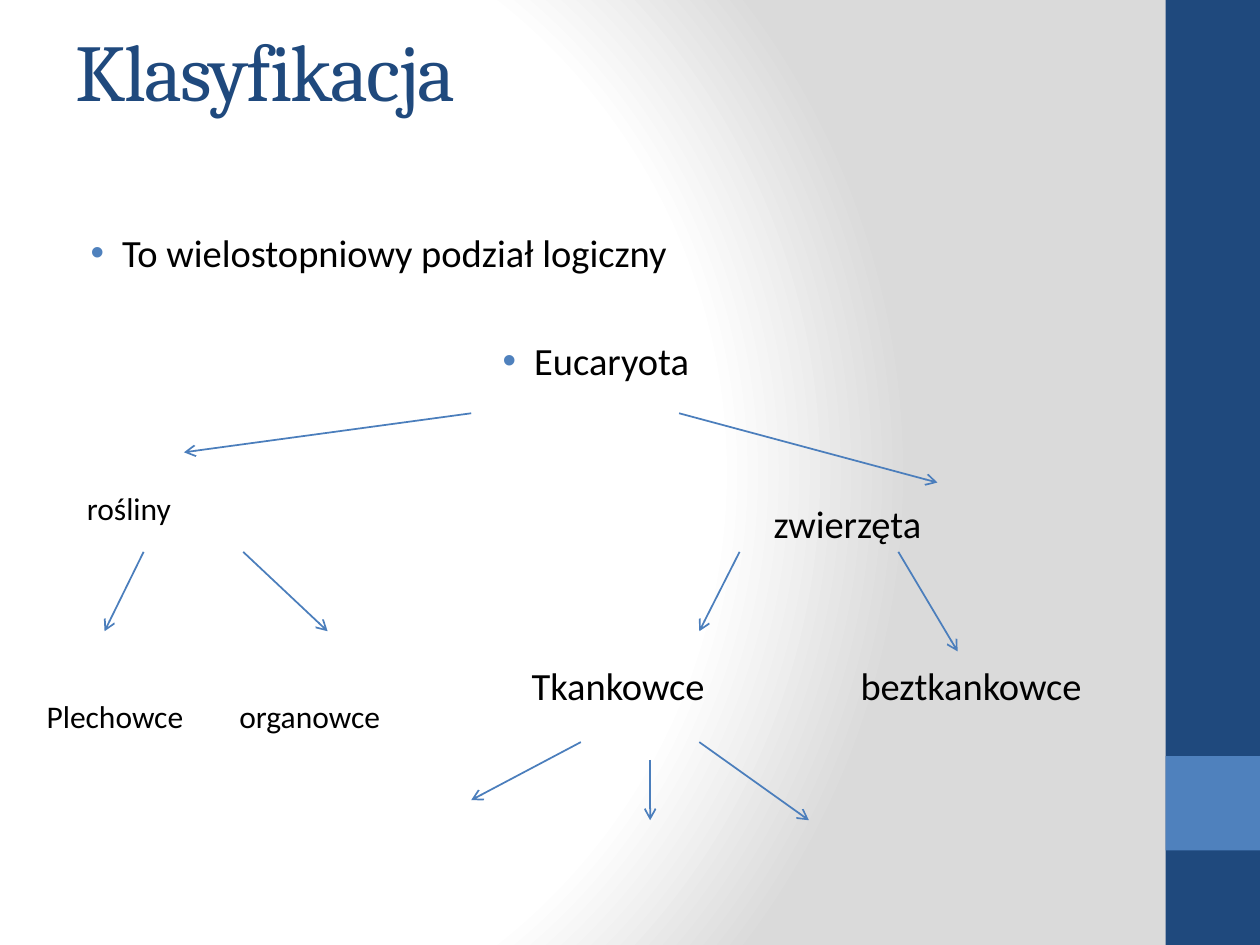
from lxml import etree
from pptx import Presentation
from pptx.dml.color import RGBColor
from pptx.enum.shapes import MSO_CONNECTOR, MSO_SHAPE
from pptx.enum.text import MSO_ANCHOR
from pptx.oxml import parse_xml
from pptx.oxml.ns import qn
from pptx.util import Inches, Pt

NAVY, BLUE, LINE, BLACK = "1F497D", "4F81BD", "4B7EBC", "000000"
NS = "http://schemas.openxmlformats.org/drawingml/2006/main"


def color(value):
    return RGBColor.from_string(value)


def add_node(parent, tag, **attrs):
    return etree.SubElement(parent, qn(tag), attrs)


def add_back(slide):
    """Radial gradient, white on the left and grey on the right."""
    slide.background.fill.gradient()
    old = next(slide.element.iter(qn("a:gradFill")))
    stops = "".join(
        f'<a:gs pos="{pos * 1000}"><a:srgbClr val="{tone}"/></a:gs>'
        for pos, tone in ((0, "FFFFFF"), (75, "FFFFFF"), (100, "DADADA")))
    new = parse_xml(
        f'<a:gradFill xmlns:a="{NS}" rotWithShape="1"><a:gsLst>{stops}</a:gsLst>'
        '<a:path path="circle"><a:fillToRect l="20000" t="50000" r="100000"'
        ' b="50000"/></a:path></a:gradFill>')
    old.getparent().replace(old, new)


def add_rect(slide, left, top, width, height, fill):
    rect = slide.shapes.add_shape(
        MSO_SHAPE.RECTANGLE, Inches(left), Inches(top), Inches(width), Inches(height))
    rect.shadow.inherit = False
    rect.fill.solid()
    rect.fill.fore_color.rgb = color(fill)
    rect.line.fill.background()


def add_band(slide, left, top, width, height):
    """Side band with a light square near its foot."""
    add_rect(slide, left, top, width, height, NAVY)
    add_rect(slide, left, top + height - 2 * width, width, width, BLUE)


def add_text(slide, text, left, mid, width, size=22, font="Calibri",
             tone=BLACK, height=0.4):
    """One line of text, centred on the height mid."""
    box = slide.shapes.add_textbox(
        Inches(left), Inches(mid - height / 2), Inches(width), Inches(height))
    frame = box.text_frame
    frame.word_wrap = True
    frame.vertical_anchor = MSO_ANCHOR.MIDDLE
    frame.margin_left = frame.margin_right = 0
    frame.margin_top = frame.margin_bottom = 0
    para = frame.paragraphs[0]
    para.text = text
    para.font.size = Pt(size)
    para.font.name = font
    para.font.color.rgb = color(tone)
    return para


def add_title(slide, left, mid, width):
    para = add_text(slide, "Klasyfikacja", left, mid, width, 46, "Cambria", NAVY, 0.8)
    para.runs[0].font._element.set("spc", "-100")


def add_bullet(slide, text, left, mid, width):
    props = add_text(slide, text, left, mid, width)._p.get_or_add_pPr()
    props.set("marL", str(Inches(0.25)))
    props.set("indent", str(-Inches(0.25)))
    tint = etree.Element(qn("a:buClr"))
    add_node(tint, "a:srgbClr", val=BLUE)
    face = etree.Element(qn("a:buFont"), typeface="Arial")
    mark = etree.Element(qn("a:buChar"), char="•")
    for spot, node in enumerate((tint, face, mark)):
        props.insert(spot, node)


def add_arrow(slide, x1, y1, x2, y2):
    arrow = slide.shapes.add_connector(
        MSO_CONNECTOR.STRAIGHT, Inches(x1), Inches(y1), Inches(x2), Inches(y2))
    arrow.line.color.rgb = color(LINE)
    arrow.line.width = Pt(1)
    add_node(arrow.line._get_or_add_ln(), "a:tailEnd", type="arrow")
    add_node(arrow._element.spPr, "a:effectLst")


def add_tree(slide, left, top):
    """Classification tree: labels and arrows, offset from its corner."""
    add_bullet(slide, "Eucaryota", left + 3.74, top + 0.2, 2)
    labels = [
        ("rośliny", 0.44, 1.37, 18),
        ("zwierzęta", 5.89, 1.49, 22),
        ("Plechowce", 0.12, 3.02, 18),
        ("organowce", 1.65, 3.02, 18),
        ("Tkankowce", 3.97, 2.78, 22),
        ("beztkankowce", 6.58, 2.78, 22),
    ]
    for text, x, mid, size in labels:
        add_text(slide, text, left + x, top + mid, 2, size)
    arrows = [
        # Eucaryota
        (3.49, 0.62, 1.21, 0.93), (5.14, 0.62, 7.19, 1.17),
        # rośliny
        (0.89, 1.72, 0.58, 2.35), (1.68, 1.72, 2.35, 2.35),
        # zwierzęta
        (5.62, 1.72, 5.3, 2.35), (6.88, 1.72, 7.35, 2.51),
        # Tkankowce
        (4.36, 3.23, 3.49, 3.69), (4.91, 3.37, 4.91, 3.85), (5.3, 3.23, 6.17, 3.85),
    ]
    for x1, y1, x2, y2 in arrows:
        add_arrow(slide, left + x1, top + y1, left + x2, top + y2)


def main():
    deck = Presentation()
    deck.slide_width, deck.slide_height = Inches(10), Inches(7.5)
    slide = deck.slides.add_slide(deck.slide_layouts[6])
    add_back(slide)
    add_band(slide, 9.25, 0, 0.75, 7.5)
    add_title(slide, 0.6, 0.55, 8.13)
    add_bullet(slide, "To wielostopniowy podział logiczny", 0.72, 2, 8)
    add_tree(slide, 0.25, 2.66)
    deck.save("out.pptx")


if __name__ == "__main__":
    main()
